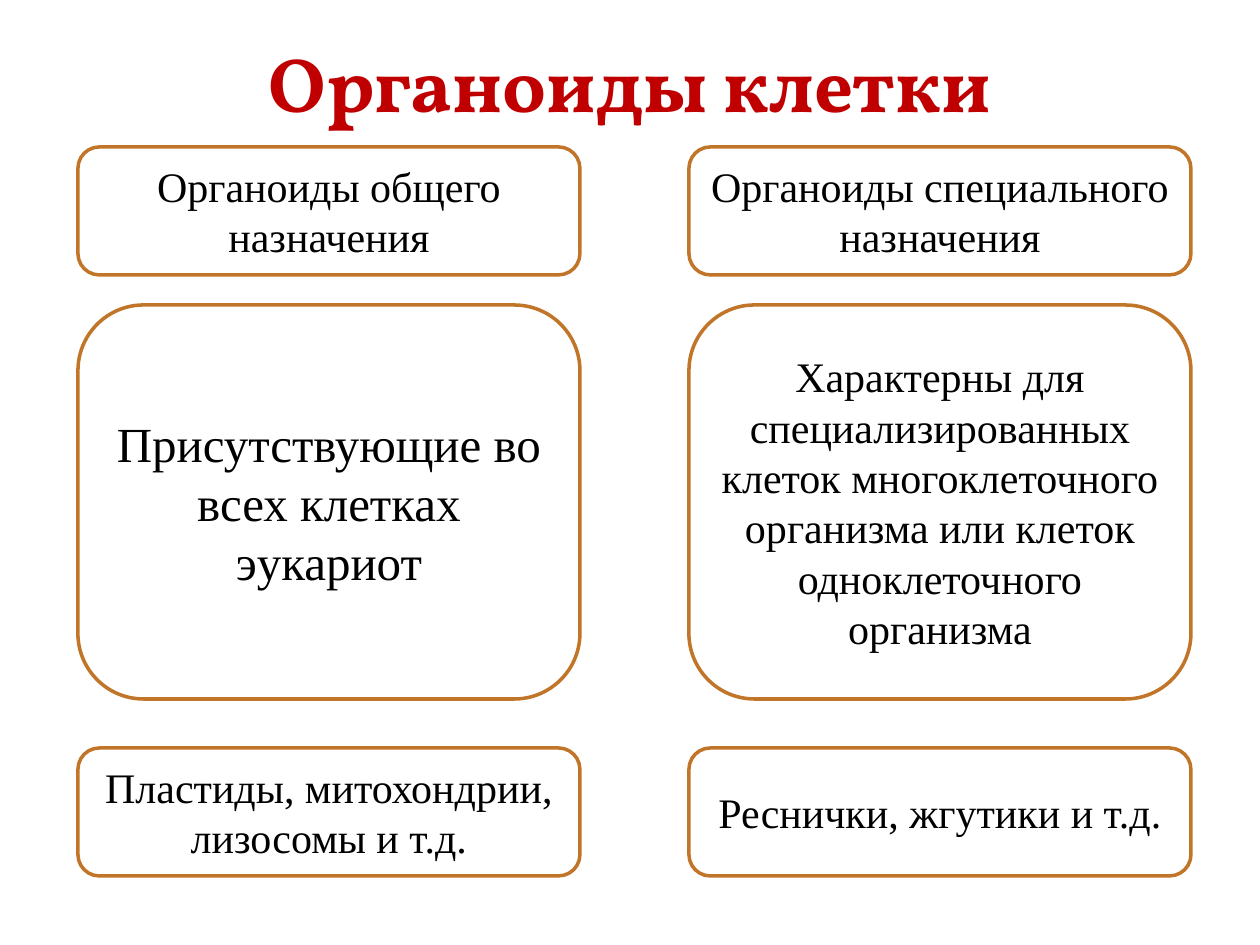
from dataclasses import dataclass

from pptx import Presentation
from pptx.dml.color import RGBColor
from pptx.enum.shapes import MSO_SHAPE as Shape
from pptx.enum.text import MSO_ANCHOR as Anchor, MSO_AUTO_SIZE as AutoSize, PP_ALIGN as Align
from pptx.util import Emu, Pt

PX_PER_INCH = 126


@dataclass(frozen=True)
class Theme:
    title_font: str = "Vollkorn"
    body_font: str = "Times New Roman"
    title_color: RGBColor = RGBColor(0xC0, 0x00, 0x00)
    text_color: RGBColor = RGBColor(0x00, 0x00, 0x00)
    card_fill: RGBColor = RGBColor(0xFF, 0xFF, 0xFF)
    card_line: RGBColor = RGBColor(0xC1, 0x75, 0x29)
    title_size: int = 44
    large_size: int = 28
    body_size: int = 24
    line_width: int = 2


THEME = Theme()

# Card grid in px: column lefts, and (top, height) of each row
COLUMN_LEFTS = (78, 689)
CARD_WIDTH = 502
ROWS = ((147, 128), (305, 394), (748, 128))

# One row per level: heading, description, examples
CARDS = (
    (("Органоиды общего назначения", THEME.body_size),
     ("Органоиды специального назначения", THEME.body_size)),
    (("Присутствующие во всех клетках эукариот", THEME.large_size),
     ("Характерны для специализированных клеток многоклеточного организма "
      "или клеток одноклеточного организма", THEME.body_size)),
    (("Пластиды, митохондрии, лизосомы и т.д.", THEME.body_size),
     ("Реснички, жгутики и т.д.", THEME.body_size)),
)


def px(value):
    return Emu(round(value * 914400 / PX_PER_INCH))


def format_text(text_frame, font_name, size, color, align, bold=False):
    for paragraph in text_frame.paragraphs:
        paragraph.alignment = align
        for run in paragraph.runs:
            run.font.name = font_name
            run.font.size = Pt(size)
            run.font.bold = bold
            run.font.color.rgb = color


def set_title(slide, text):
    title = slide.shapes.title
    title.left, title.top, title.width, title.height = px(256), px(29), px(758), px(106)
    text_frame = title.text_frame
    text_frame.text = text
    text_frame.word_wrap = False
    text_frame.auto_size = AutoSize.SHAPE_TO_FIT_TEXT
    text_frame.vertical_anchor = Anchor.TOP
    format_text(text_frame, THEME.title_font, THEME.title_size,
                THEME.title_color, Align.LEFT, bold=True)


def add_card(slide, left, top, height, text, size):
    card = slide.shapes.add_shape(Shape.ROUNDED_RECTANGLE,
                                  px(left), px(top), px(CARD_WIDTH), px(height))
    card.shadow.inherit = False
    card.fill.solid()
    card.fill.fore_color.rgb = THEME.card_fill
    card.line.color.rgb = THEME.card_line
    card.line.width = Pt(THEME.line_width)
    text_frame = card.text_frame
    text_frame.text = text
    text_frame.word_wrap = True
    text_frame.vertical_anchor = Anchor.MIDDLE
    format_text(text_frame, THEME.body_font, size, THEME.text_color, Align.CENTER)


def main():
    presentation = Presentation()
    presentation.slide_width, presentation.slide_height = px(1260), px(945)
    slide = presentation.slides.add_slide(presentation.slide_layouts[5])

    # Title
    set_title(slide, "Органоиды клетки")

    # Two columns of cards
    for (top, height), row in zip(ROWS, CARDS):
        for left, (text, size) in zip(COLUMN_LEFTS, row):
            add_card(slide, left, top, height, text, size)

    presentation.save("out.pptx")


if __name__ == "__main__":
    main()
